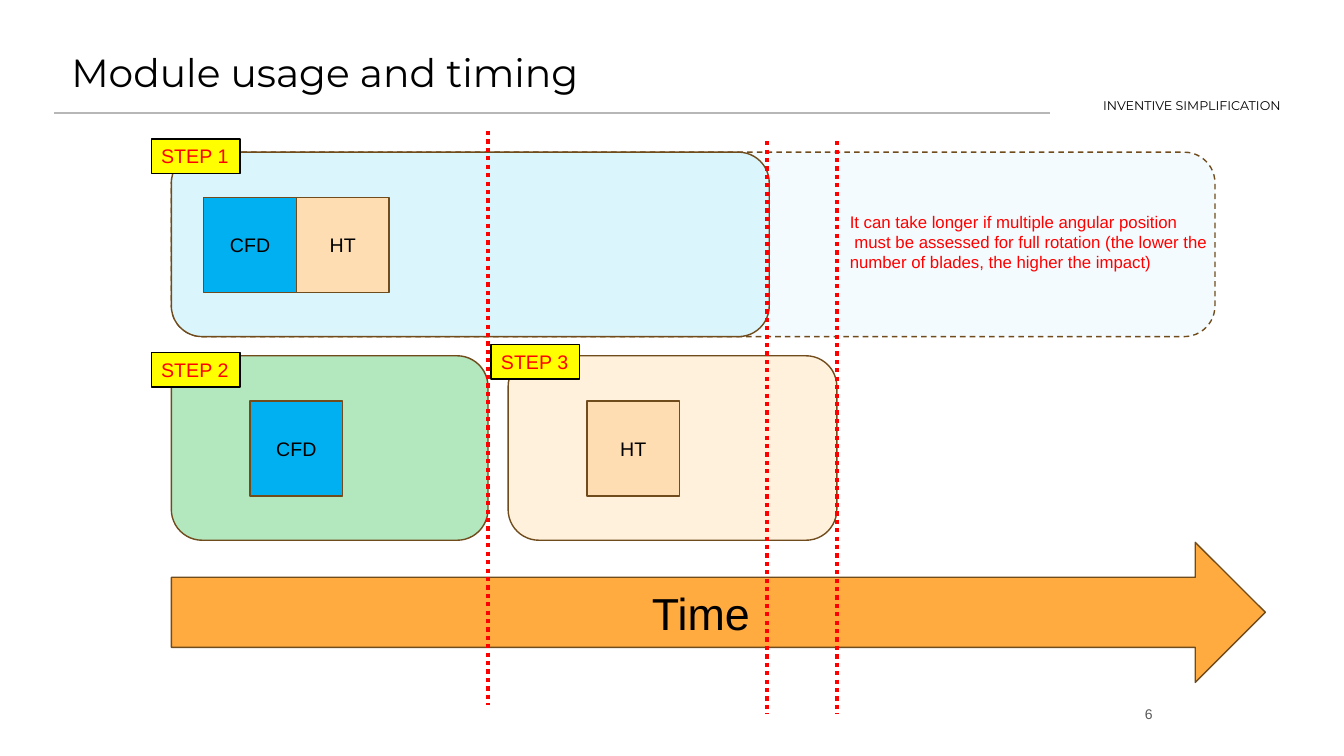
"""Build the slide on module usage and timing."""
import pptx
import pptx.dml.color
import pptx.enum.dml
import pptx.enum.shapes
import pptx.enum.text
import pptx.oxml.ns
import pptx.oxml.xmlchemy
import pptx.util

RGB = pptx.dml.color.RGBColor
KIND = pptx.enum.shapes.MSO_SHAPE
DASH = pptx.enum.dml.MSO_LINE
ALIGN = pptx.enum.text.PP_ALIGN
ANCHOR = pptx.enum.text.MSO_ANCHOR
FIT = pptx.enum.text.MSO_AUTO_SIZE

BLACK = RGB(0x00, 0x00, 0x00)
RED = RGB(0xFF, 0x00, 0x00)
YELLOW = RGB(0xFF, 0xFF, 0x00)
BROWN = RGB(0x70, 0x4B, 0x1C)
SKY = RGB(0xDB, 0xF5, 0xFC)
BLUE = RGB(0x00, 0xB0, 0xF0)
PEACH = RGB(0xFF, 0xDD, 0xB3)
CREAM = RGB(0xFF, 0xF1, 0xDC)
GREEN = RGB(0xB3, 0xE7, 0xBE)
ORANGE = RGB(0xFF, 0xAB, 0x40)
SILVER = RGB(0xB7, 0xB7, 0xB7)
GREY = RGB(0x59, 0x59, 0x59)

LEFT = 170
ROW_ONE, ROW_TWO = 151, 353
MODULES = {"CFD": BLUE, "HT": PEACH}


def px(count):
    """Turn px, a hundred to the inch, into EMU."""
    return pptx.util.Emu(count * 9144)


def write(shape, lines, size, color, font="Arial", align=ALIGN.LEFT,
          anchor=ANCHOR.TOP, wrap=True, pad=5):
    """Fill a shape with paragraphs of one style."""
    frame = shape.text_frame
    frame.word_wrap = wrap
    frame.vertical_anchor = anchor
    frame.margin_left = frame.margin_right = px(10)
    frame.margin_top = frame.margin_bottom = px(pad)
    frame.text = "\n".join(lines)
    for para in frame.paragraphs:
        para.alignment = align
        para.font.size = pptx.util.Pt(size)
        para.font.name = font
        para.font.color.rgb = color


def add_text(slide, box, lines, size, color, **style):
    """Add a text box."""
    text = slide.shapes.add_textbox(*map(px, box))
    write(text, lines, size, color, **style)
    return text


def add_form(slide, kind, box, fill, edge=BROWN):
    """Add a filled and outlined preset shape."""
    form = slide.shapes.add_shape(kind, *map(px, box))
    form.shadow.inherit = False
    form.fill.solid()
    form.fill.fore_color.rgb = fill
    form.line.color.rgb = edge
    form.line.width = pptx.util.Pt(1)
    return form


def add_phase(slide, left, top, width, fill):
    """Add a rounded phase panel."""
    return add_form(slide, KIND.ROUNDED_RECTANGLE, (left, top, width, 183), fill)


def add_module(slide, left, row, name):
    """Add a module square inside a row of phases."""
    square = add_form(slide, KIND.RECTANGLE, (left, row + 45, 92, 94), MODULES[name])
    write(square, [name], 14, BLACK, align=ALIGN.CENTER, anchor=ANCHOR.MIDDLE)


def add_step(slide, left, top, number):
    """Add a yellow step label."""
    label = add_form(slide, KIND.RECTANGLE, (left, top, 88, 34), YELLOW, BLACK)
    write(label, [f"STEP {number}"], 14, RED, wrap=False)
    label.text_frame.auto_size = FIT.SHAPE_TO_FIT_TEXT


def add_rule(slide, start, end, color, width, dash=None):
    """Add a straight line without shadow."""
    rule = slide.shapes.add_connector(
        pptx.enum.shapes.MSO_CONNECTOR.STRAIGHT, *map(px, start + end))
    rule.line.color.rgb = color
    rule.line.width = pptx.util.Pt(width)
    if dash:
        rule.line.dash_style = dash
    rule._element.spPr.append(pptx.oxml.xmlchemy.OxmlElement("a:effectLst"))


def fade(form, percent):
    """Make the solid fill of a shape partly clear."""
    tint = form._element.spPr.find(
        pptx.oxml.ns.qn("a:solidFill") + "/" + pptx.oxml.ns.qn("a:srgbClr"))
    alpha = pptx.oxml.xmlchemy.OxmlElement("a:alpha")
    alpha.set("val", str(percent * 1000))
    tint.append(alpha)


def main():
    """Build and save the slide."""
    deck = pptx.Presentation()
    deck.slide_width, deck.slide_height = px(1333), px(750)
    slide = deck.slides.add_slide(deck.slide_layouts[6])

    add_text(slide, (1033, 90, 298, 32), ["INVENTIVE SIMPLIFICATION"], 9, BLACK,
             font="Montserrat", align=ALIGN.CENTER, pad=10)
    add_rule(slide, (54, 112), (1041, 112), SILVER, 1.5)

    extra = add_phase(slide, LEFT, ROW_ONE, 1035, SKY)
    extra.line.dash_style = DASH.DASH
    fade(extra, 33)
    add_phase(slide, LEFT, ROW_ONE, 593, SKY)
    add_text(slide, (61, 38, 740, 83), ["Module usage and timing"], 28, BLACK,
             font="Montserrat", pad=10)
    add_text(slide, (1093, 680, 60, 57), ["6"], 10, GREY,
             align=ALIGN.RIGHT, anchor=ANCHOR.MIDDLE, pad=10)

    add_phase(slide, LEFT, ROW_TWO, 314, GREEN)
    add_phase(slide, 504, ROW_TWO, 326, CREAM)
    for left, row, name in ((202, ROW_ONE, "CFD"), (294, ROW_ONE, "HT"),
                            (248, ROW_TWO, "CFD"), (582, ROW_TWO, "HT")):
        add_module(slide, left, row, name)
    for number, (left, top) in enumerate(((150, 138), (150, 350), (487, 342)), 1):
        add_step(slide, left, top, number)

    arrow = add_form(slide, KIND.RIGHT_ARROW, (LEFT, 538, 1085, 139), ORANGE)
    write(arrow, ["Time"], 32, BLACK, align=ALIGN.CENTER, anchor=ANCHOR.MIDDLE)
    for left, top, foot in ((484, 130, 699), (830, 140, 708), (761, 140, 708)):
        add_rule(slide, (left, top), (left, foot), RED, 3, DASH.ROUND_DOT)

    note = add_text(slide, (833, 205, 399, 71), [
        "It can take longer if multiple angular position",
        " must be assessed for full rotation (the lower the number of blades, "
        "the higher the impact)"], 12, RED)
    note.text_frame.auto_size = FIT.SHAPE_TO_FIT_TEXT

    deck.save("out.pptx")


if __name__ == "__main__":
    main()
